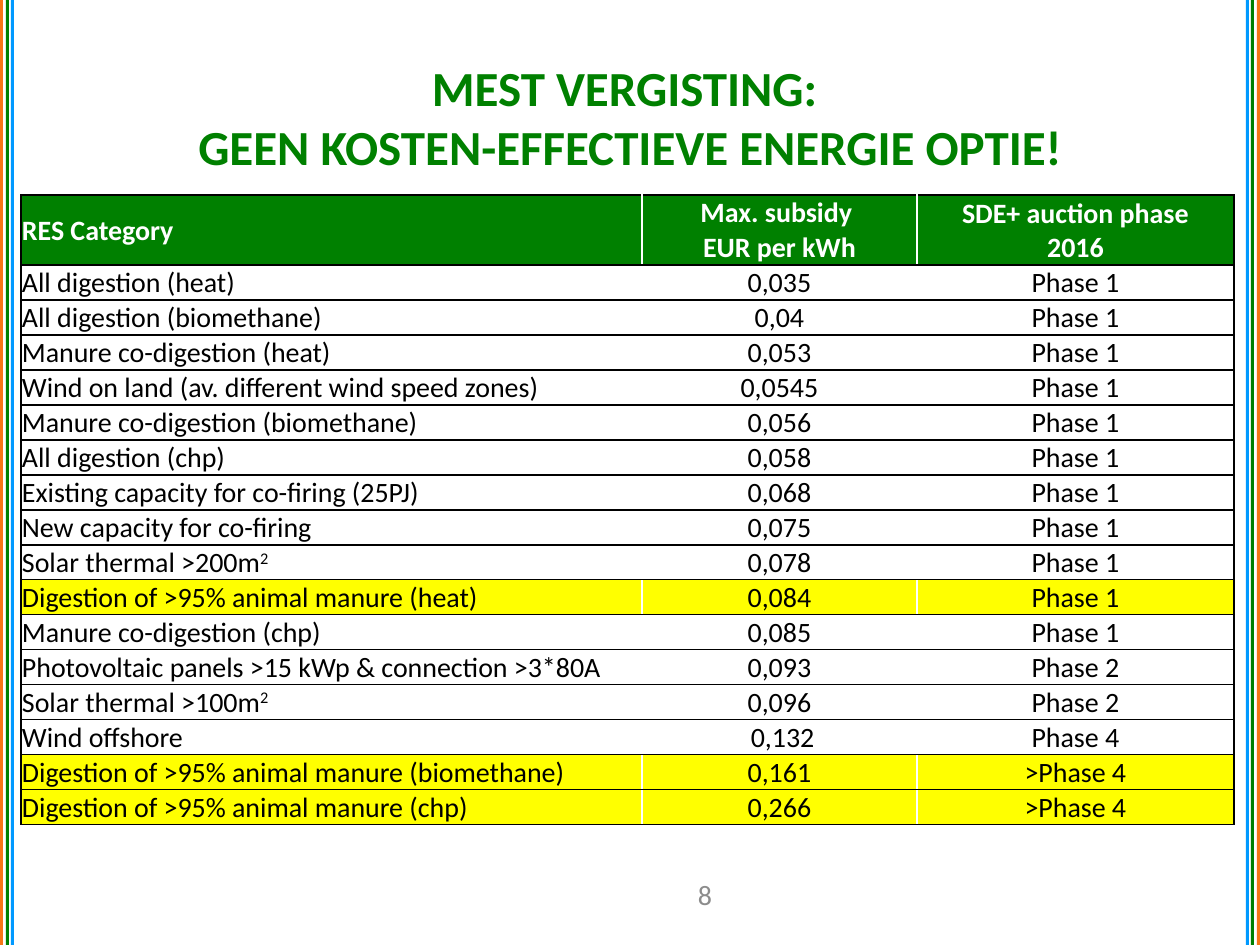
from dataclasses import dataclass

from lxml.etree import SubElement
from pptx import Presentation
from pptx.dml.color import RGBColor
from pptx.enum.shapes import MSO_SHAPE as Shape
from pptx.enum.text import MSO_ANCHOR as Anchor, MSO_AUTO_SIZE as AutoSize, PP_ALIGN as Align
from pptx.oxml import parse_xml
from pptx.oxml.ns import nsdecls, qn
from pptx.util import Pt

# Content
TITLE = ["MEST VERGISTING: ", "GEEN KOSTEN-EFFECTIEVE ENERGIE OPTIE!"]
PAGE_NUMBER = "8"
HEADER = ("RES Category", "Max. subsidy \nEUR per kWh", "SDE+ auction phase\n2016")
CATEGORIES = [  # text after ^ is superscript
    ("All digestion (heat)", "0,035", "Phase 1"),
    ("All digestion (biomethane)", "0,04", "Phase 1"),
    ("Manure co-digestion (heat)", "0,053", "Phase 1"),
    ("Wind on land (av. different wind speed zones)", "0,0545", "Phase 1"),
    ("Manure co-digestion (biomethane)", "0,056", "Phase 1"),
    ("All digestion (chp)", "0,058", "Phase 1"),
    ("Existing capacity for co-firing (25PJ)", "0,068", "Phase 1"),
    ("New capacity for co-firing", "0,075", "Phase 1"),
    ("Solar thermal >200m^2", "0,078", "Phase 1"),
    ("Digestion of >95% animal manure (heat)", "0,084", "Phase 1"),
    ("Manure co-digestion (chp)", "0,085", "Phase 1"),
    ("Photovoltaic panels >15 kWp & connection >3*80A", "0,093", "Phase 2"),
    ("Solar thermal >100m^2", "0,096", "Phase 2"),
    ("Wind offshore", " 0,132", "Phase 4"),
    ("Digestion of >95% animal manure (biomethane)", "0,161", ">Phase 4"),
    ("Digestion of >95% animal manure (chp)", "0,266", ">Phase 4"),
]
HIGHLIGHT = "Digestion of >95%"


@dataclass(frozen=True)
class Theme:
    font: str = "Calibri"
    title_size: int = 28
    text_size: int = 16
    orange: str = "F67616"
    green: str = "008000"
    blue: str = "0099FF"
    yellow: str = "FFFF00"
    white: str = "FFFFFF"
    black: str = "000000"
    grey: str = "8C8C8C"


THEME = Theme()

# Layout in px, 126 to the inch
SLIDE_W, SLIDE_H = 1260, 945
STRIPE_W = 3
STRIPES = [(0, THEME.orange), (6, THEME.green), (11, THEME.blue)]
TITLE_BOX = (63, 38, 1134, 157)
NUMBER_BOX = (650, 869, 110, 50)
TABLE_LEFT, TABLE_TOP = 21, 195
COLUMN_WIDTHS = [621, 275, 317]
HEADER_H, ROW_H = 70, 35
COLUMN_ALIGNS = [Align.JUSTIFY, Align.CENTER, Align.CENTER]
COLUMN_ANCHORS = [Anchor.MIDDLE, Anchor.MIDDLE, Anchor.BOTTOM]
COLUMN_BORDERS = ["LTB", "TB", "RTB"]


def px(length):
    return round(length * 914400 / 126)


def place(shape, box):
    shape.left, shape.top, shape.width, shape.height = map(px, box)


def style(paragraph, size, color, bold, align):
    paragraph.alignment = align
    for run in paragraph.runs:
        run.font.name, run.font.size, run.font.bold = THEME.font, Pt(size), bold
        run.font.color.rgb = RGBColor.from_string(color)


def add_stripe(slide, left, color):
    stripe = slide.shapes.add_shape(Shape.RECTANGLE, px(left), 0, px(STRIPE_W), px(SLIDE_H))
    stripe.shadow.inherit = False
    stripe.fill.solid()
    stripe.fill.fore_color.rgb = RGBColor.from_string(color)
    stripe.line.fill.background()


def add_borders(cell, sides):
    properties = cell._tc.get_or_add_tcPr()
    for index, side in enumerate(sides):
        line = parse_xml(f'<a:ln{side} {nsdecls("a")} w="{Pt(1)}"/>')
        fill = SubElement(line, qn("a:solidFill"))
        SubElement(fill, qn("a:srgbClr"), val=THEME.black)
        properties.insert(index, line)


def fill_cell(cell, column, text, fill, color, bold):
    cell.margin_left = cell.margin_right = cell.margin_top = px(1)
    cell.margin_bottom = 0
    cell.vertical_anchor = COLUMN_ANCHORS[column]
    base, _, superscript = text.partition("^")
    cell.text_frame.text = base
    if superscript:
        raised = cell.text_frame.paragraphs[0].add_run()
        raised.text = superscript
        raised._r.get_or_add_rPr().set("baseline", "30000")
    for paragraph in cell.text_frame.paragraphs:
        style(paragraph, THEME.text_size, color, bold, COLUMN_ALIGNS[column])
    cell.fill.solid()
    cell.fill.fore_color.rgb = RGBColor.from_string(fill)
    add_borders(cell, COLUMN_BORDERS[column])


def add_subsidy_table(slide):
    rows = [HEADER, *CATEGORIES]
    heights = [HEADER_H] + [ROW_H] * len(CATEGORIES)
    box = (TABLE_LEFT, TABLE_TOP, sum(COLUMN_WIDTHS), sum(heights))
    table = slide.shapes.add_table(len(rows), len(HEADER), *map(px, box)).table
    for column, width in zip(table.columns, COLUMN_WIDTHS):
        column.width = px(width)
    for r, (row, height) in enumerate(zip(rows, heights)):
        table.rows[r].height = px(height)
        if r == 0:
            look = (THEME.green, THEME.white, True)
        else:
            fill = THEME.yellow if row[0].startswith(HIGHLIGHT) else THEME.white
            look = (fill, THEME.black, False)
        for c, text in enumerate(row):
            fill_cell(table.cell(r, c), c, text, *look)


def main():
    deck = Presentation()
    deck.slide_width, deck.slide_height = px(SLIDE_W), px(SLIDE_H)
    slide = deck.slides.add_slide(deck.slide_layouts[5])

    # Stripes, mirrored on both edges
    for offset, color in STRIPES:
        add_stripe(slide, offset, color)
        add_stripe(slide, SLIDE_W - STRIPE_W - offset, color)

    # Title
    title = slide.shapes.title
    place(title, TITLE_BOX)
    title.text_frame.text = "\v".join(TITLE)
    title.text_frame.auto_size = AutoSize.NONE
    title.text_frame.vertical_anchor = Anchor.MIDDLE
    style(title.text_frame.paragraphs[0], THEME.title_size, THEME.green, True, Align.CENTER)

    # Page number
    number = slide.shapes.add_textbox(*map(px, NUMBER_BOX)).text_frame
    number.word_wrap = True
    number.vertical_anchor = Anchor.MIDDLE
    number.text = PAGE_NUMBER
    style(number.paragraphs[0], THEME.text_size, THEME.grey, False, Align.CENTER)

    add_subsidy_table(slide)
    deck.save("out.pptx")


if __name__ == "__main__":
    main()
